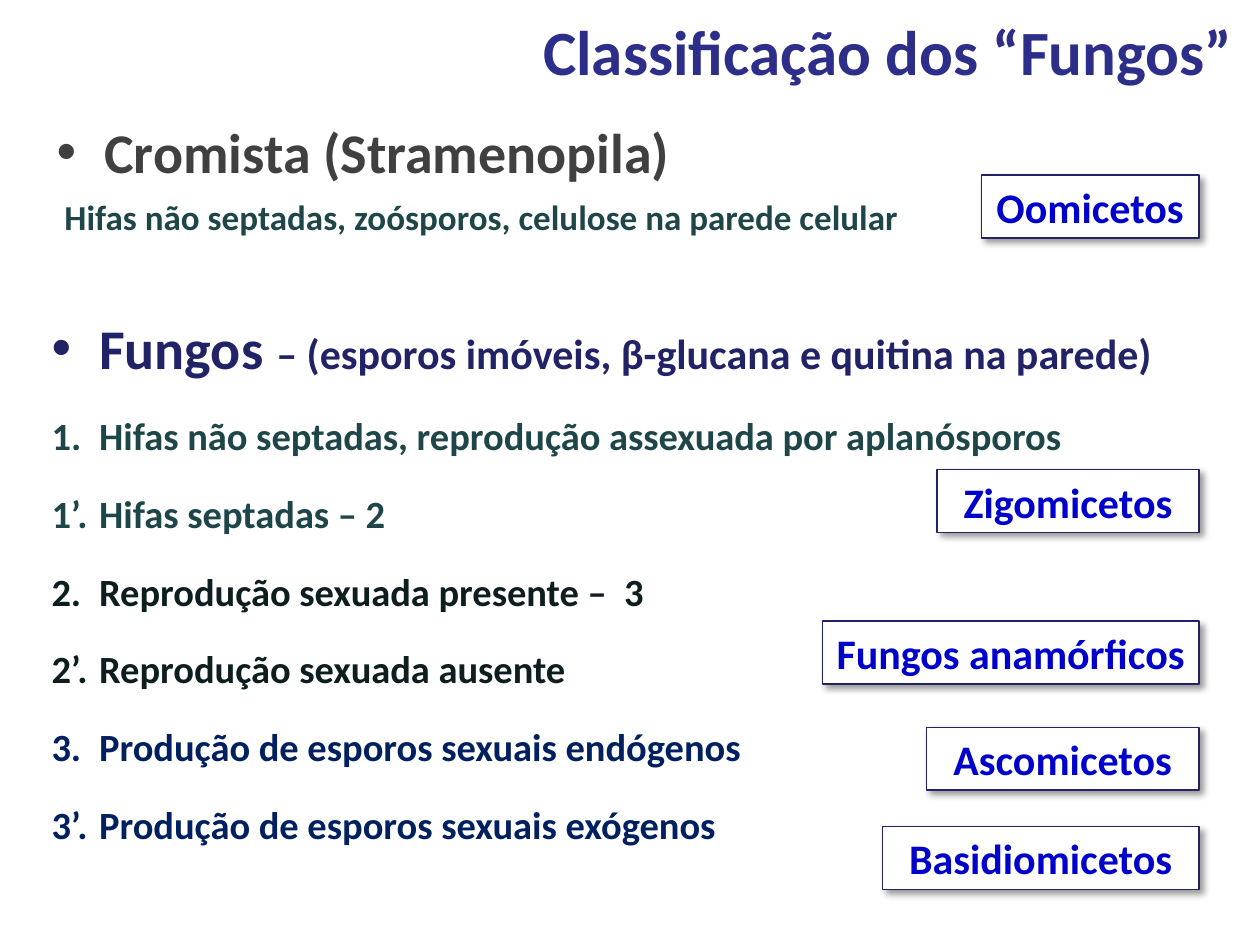
import pptx
import pptx.util
import pptx.dml.color
import pptx.enum.shapes
import pptx.enum.text
from lxml import etree

Cm, Pt = pptx.util.Cm, pptx.util.Pt
ALIGN = pptx.enum.text.PP_ALIGN
NS = "http://schemas.openxmlformats.org/drawingml/2006/main"

FONT = "Calibri"
GRAY, NAVY, TEAL, DARK, BLUE = "404040", "222267", "1E4649", "0E1E20", "002060"
TITLE, TAG = "2D2D8A", "0000CC"

HANG = 0.96
DOT = ("buChar", {"char": "•"})
NUM = ("buAutoNum", {"type": "arabicPeriod"})

# box in cm, space after, paragraphs: (runs of (text, size), colour, left, first, bullet)
BLOCKS = [
    ((0.89, 2.24, 22.81, 2.69), 6, [
        ([("Cromista (Stramenopila)", 32)], GRAY, HANG, -HANG, DOT),
        ([("Hifas não septadas, zoósporos, celulose na parede celular", 20)],
         TEAL, 0.16, 0, None),
    ]),
    ((0.79, 6.2, 22.83, 11.13), 18, [
        ([("Fungos ", 32), ("– (esporos imóveis, β-glucana e quitina na parede)", 24)],
         NAVY, HANG, -HANG, DOT),
        ([("Hifas não septadas, reprodução assexuada por aplanósporos", 22)],
         TEAL, HANG, -HANG, NUM),
    ] + [([(text, 22)], tint, HANG, -HANG, None) for text, tint in [
        ("1’.\tHifas septadas – 2", TEAL),
        ("2.\tReprodução sexuada presente –  3", DARK),
        ("2’.\tReprodução sexuada ausente", DARK),
        ("3.\tProdução de esporos sexuais endógenos", BLUE),
        ("3’.\tProdução de esporos sexuais exógenos", BLUE),
    ]]),
]

# text, top, width in cm; all share one right edge
TAGS = [
    ("Oomicetos", 3.53, 4.39),
    ("Zigomicetos", 9.47, 5.28),
    ("Fungos anamórficos", 12.52, 7.59),
    ("Ascomicetos", 14.66, 5.49),
    ("Basidiomicetos", 16.66, 6.38),
]
RIGHT, TALL = 24.17, 1.27


def paint(tint):
    return pptx.dml.color.RGBColor.from_string(tint)


def node(up, tag, **attrs):
    return etree.SubElement(up, f"{{{NS}}}{tag}", attrs)


def style(par, tint, size=None):
    font = par.font
    font.name, font.bold = FONT, True
    font.color.rgb = paint(tint)
    if size:
        font.size = Pt(size)


def add_box(slide, box):
    frame = slide.shapes.add_textbox(*map(Cm, box)).text_frame
    frame.word_wrap = True
    return frame


def add_block(slide, box, after, pars):
    frame = add_box(slide, box)
    for i, (runs, tint, left, first, mark) in enumerate(pars):
        par = frame.add_paragraph() if i else frame.paragraphs[0]
        par.space_after = Pt(after)
        props = par._p.get_or_add_pPr()
        props.set("marL", str(Cm(left)))
        props.set("indent", str(Cm(first)))
        if mark:
            name, attrs = mark
            if mark is DOT:
                node(props, "buFont", typeface="Arial")
            node(props, name, **attrs)
        style(par, tint, runs[0][1] if len(runs) == 1 else None)
        for text, size in runs:
            run = par.add_run()
            run.text = text
            if len(runs) > 1:
                run.font.size = Pt(size)


def add_shade(shape):
    """Give the shape a soft shadow to the lower right."""
    shape.shadow.inherit = False
    fx = shape._element.spPr.find(f"{{{NS}}}effectLst")
    shade = node(fx, "outerShdw", blurRad=str(Pt(4)), dist=str(Pt(3)),
                 dir=str(45 * 60000), algn="tl", rotWithShape="0")
    node(node(shade, "srgbClr", val="000000"), "alpha", val="40000")


def add_tag(slide, text, top, wide):
    shape = slide.shapes.add_shape(
        pptx.enum.shapes.MSO_SHAPE.RECTANGLE,
        Cm(RIGHT - wide), Cm(top), Cm(wide), Cm(TALL))
    shape.fill.solid()
    shape.fill.fore_color.rgb = paint("FFFFFF")
    shape.line.color.rgb = paint(NAVY)
    shape.line.width = Pt(0.75)
    add_shade(shape)
    frame = shape.text_frame
    frame.word_wrap = False
    par = frame.paragraphs[0]
    par.text, par.alignment = text, ALIGN.CENTER
    style(par, TAG, 24)


def main():
    deck = pptx.Presentation()
    deck.slide_width, deck.slide_height = Cm(25.4), Cm(19.05)
    slide = deck.slides.add_slide(deck.slide_layouts[6])
    for block in BLOCKS:
        add_block(slide, *block)
    for tag in TAGS:
        add_tag(slide, *tag)
    par = add_box(slide, (10.49, 0.13, 14.61, 1.8)).paragraphs[0]
    par.text, par.alignment = "Classificação dos “Fungos”", ALIGN.RIGHT
    style(par, TITLE, 36)
    deck.save("out.pptx")


if __name__ == "__main__":
    main()
